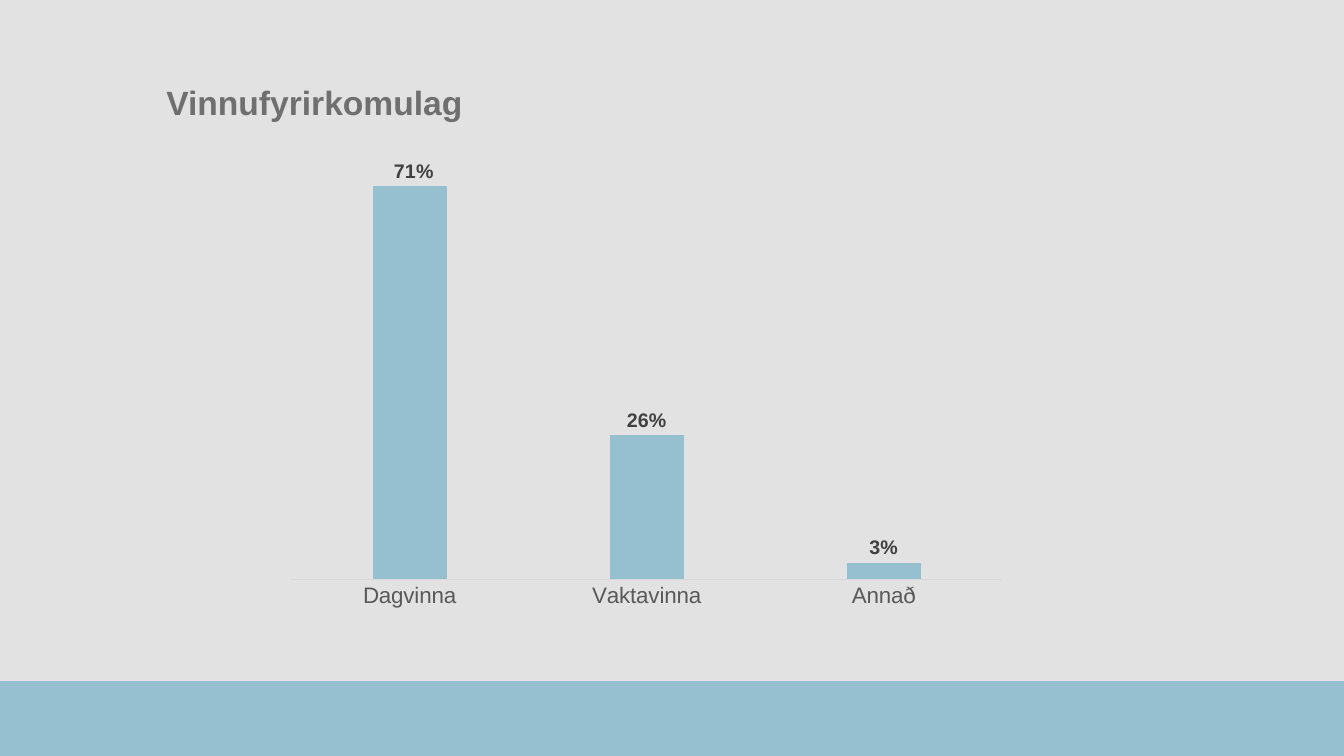
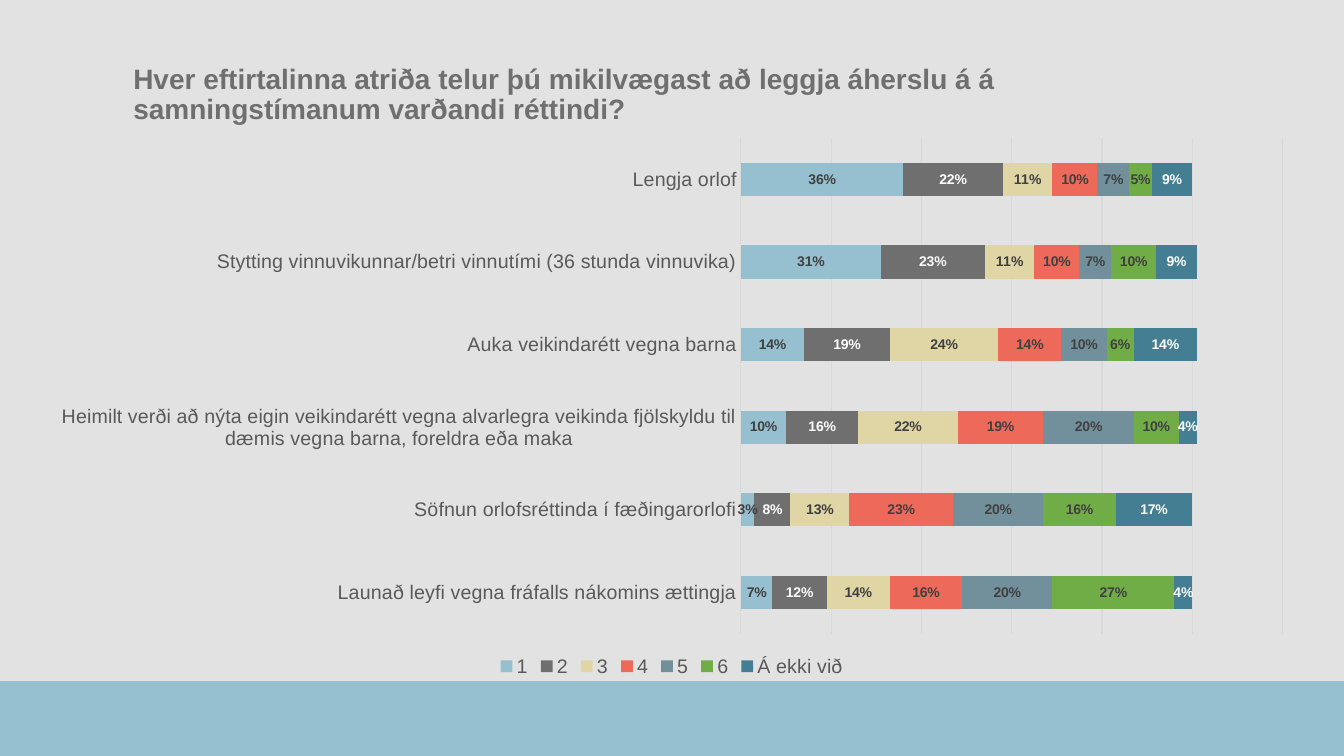
from dataclasses import dataclass

from lxml import etree
from pptx import Presentation
from pptx import util as u
from pptx.chart.data import CategoryChartData
from pptx.dml.color import RGBColor
from pptx.enum import chart as ch, shapes, text

FONT = "Arial"
BACKGROUND, BLUE, GREY, RULE = "E2E2E2", "96C0CF", "706F6F", "D9D9D9"
DARK, LABEL, WHITE = "404040", "595959", "FFFFFF"
WIDTH, HEIGHT, BAND_TOP = 960, 540, 486.5


@dataclass
class Box:
    left: float
    top: float
    width: float
    height: float

    def points(self) -> tuple:
        return tuple(u.Pt(v) for v in (self.left, self.top, self.width, self.height))


@dataclass
class Series:
    name: str
    percents: tuple
    fill: str = BLUE
    label: str = DARK


@dataclass
class ChartSlide:
    title: str
    title_box: Box
    title_size: int
    kind: ch.XL_CHART_TYPE
    chart_box: Box
    plot_box: Box
    categories: tuple
    series: tuple
    axis_max: float
    axis_size: int
    label_size: int
    gap: int
    overlap: int
    stacked: bool = False
    first_label_shift: float = 0


def rgb(value: str) -> RGBColor:
    return RGBColor.from_string(value)


def set_font(font, size: int, color: str, bold: bool = False) -> None:
    font.name, font.size, font.bold = FONT, u.Pt(size), bold
    font.color.rgb = rgb(color)


def set_fill(fill, color: str) -> None:
    fill.solid()
    fill.fore_color.rgb = rgb(color)


def set_rule(line) -> None:
    line.color.rgb, line.width = rgb(RULE), u.Pt(0.75)


def add_band(s) -> None:
    band = Box(0, BAND_TOP, WIDTH, HEIGHT - BAND_TOP)
    sp = s.shapes.add_shape(shapes.MSO_SHAPE.RECTANGLE, *band.points())
    sp.shadow.inherit = False
    set_fill(sp.fill, BLUE)
    sp.line.fill.background()


def add_title(s, item: ChartSlide) -> None:
    sp = s.shapes.title
    sp.left, sp.top, sp.width, sp.height = item.title_box.points()
    tf = sp.text_frame
    tf.text = item.title
    tf.word_wrap = True
    tf.auto_size = text.MSO_AUTO_SIZE.NONE
    tf.vertical_anchor = text.MSO_ANCHOR.MIDDLE
    p = tf.paragraphs[0]
    p.alignment, p.line_spacing = text.PP_ALIGN.LEFT, 0.9
    set_font(p.font, item.title_size, GREY, True)


def set_layout(parent, index: int, **values) -> None:
    """Give a chart part a manual layout, which python-pptx has no method for."""
    ns = "{%s}" % parent.nsmap["c"]
    for old in parent.findall(ns + "layout"):
        parent.remove(old)
    layout = etree.Element(ns + "layout")
    parent.insert(index, layout)
    manual = etree.SubElement(layout, ns + "manualLayout")
    for tag, value in values.items():
        etree.SubElement(manual, ns + tag).set("val", str(value))


def place_plot(chart, frame: Box, plot: Box) -> None:
    set_layout(chart.element.chart.plotArea, 0,
               layoutTarget="inner", xMode="edge", yMode="edge",
               x=(plot.left - frame.left) / frame.width,
               y=(plot.top - frame.top) / frame.height,
               w=plot.width / frame.width, h=plot.height / frame.height)


def shift_first_label(chart, item: ChartSlide, position) -> None:
    label = chart.plots[0].series[0].points[0].data_label
    set_font(label.font, item.label_size, item.series[0].label, True)
    label.position = position
    ns = "{%s}" % chart.element.nsmap["c"]
    set_layout(next(chart.element.iter(ns + "dLbl")), 1,
               x=item.first_label_shift / item.chart_box.width, y=0)


def add_chart(s, item: ChartSlide) -> None:
    data = CategoryChartData(number_format="0%")
    data.categories = item.categories
    for series in item.series:
        data.add_series(series.name, [v / 100 for v in series.percents])
    chart = s.shapes.add_chart(item.kind, *item.chart_box.points(), data).chart
    set_font(chart.font, 10, "000000")
    chart.has_title = False
    place_plot(chart, item.chart_box, item.plot_box)

    # Axes
    cat, val = chart.category_axis, chart.value_axis
    cat.major_tick_mark = ch.XL_TICK_MARK.NONE
    set_font(cat.tick_labels.font, item.axis_size, LABEL)
    set_rule(cat.format.line)
    val.minimum_scale, val.maximum_scale, val.major_unit = 0, item.axis_max, 0.2
    val.visible = False
    val.has_major_gridlines = item.stacked
    if item.stacked:
        set_rule(val.major_gridlines.format.line)

    # Legend
    chart.has_legend = item.stacked
    if item.stacked:
        chart.legend.position = ch.XL_LEGEND_POSITION.BOTTOM
        chart.legend.include_in_layout = False
        set_font(chart.legend.font, item.axis_size, LABEL)

    # Bars and their labels
    plot = chart.plots[0]
    plot.gap_width, plot.overlap, plot.vary_by_categories = item.gap, item.overlap, False
    position = ch.XL_LABEL_POSITION.CENTER if item.stacked else ch.XL_LABEL_POSITION.OUTSIDE_END
    for bars, series in zip(plot.series, item.series):
        set_fill(bars.format.fill, series.fill)
        labels = bars.data_labels
        labels.show_value, labels.position = True, position
        labels.number_format, labels.number_format_is_linked = "0%", False
        set_font(labels.font, item.label_size, series.label, True)
    if item.first_label_shift:
        shift_first_label(chart, item, position)


SLIDES = (
    ChartSlide(
        title="Vinnufyrirkomulag",
        title_box=Box(111.6, 50.4, 737.3, 49), title_size=24,
        kind=ch.XL_CHART_TYPE.COLUMN_CLUSTERED,
        chart_box=Box(197.3, 92.2, 529.2, 349.2), plot_box=Box(208, 97.5, 508, 316.3),
        categories=("Dagvinna", "Vaktavinna", "Annað"),
        series=(Series("Series 1", (71, 26, 3)),),
        axis_max=0.8, axis_size=16, label_size=14, gap=219, overlap=-27,
        first_label_shift=3,
    ),
    ChartSlide(
        title="Hver eftirtalinna atriða telur þú mikilvægast að leggja áherslu á "
              "á samningstímanum varðandi réttindi?",
        title_box=Box(88, 36, 760.3, 64.8), title_size=20,
        kind=ch.XL_CHART_TYPE.BAR_STACKED,
        chart_box=Box(25.9, 90.7, 907.9, 396), plot_box=Box(529.2, 98.7, 387, 354),
        categories=(
            "Launað leyfi vegna fráfalls nákomins ættingja",
            "Söfnun orlofsréttinda í fæðingarorlofi",
            "Heimilt verði að nýta eigin veikindarétt vegna alvarlegra veikinda "
            "fjölskyldu til dæmis vegna barna, foreldra eða maka",
            "Auka veikindarétt vegna barna",
            "Stytting vinnuvikunnar/betri vinnutími (36 stunda vinnuvika)",
            "Lengja orlof",
        ),
        series=(
            Series("1", (7, 3, 10, 14, 31, 36)),
            Series("2", (12, 8, 16, 19, 23, 22), GREY, WHITE),
            Series("3", (14, 13, 22, 24, 11, 11), "DFD5A5"),
            Series("4", (16, 23, 19, 14, 10, 10), "ED6959"),
            Series("5", (20, 20, 20, 10, 7, 7), "71909C"),
            Series("6", (27, 16, 10, 6, 10, 5), "70AD47"),
            Series("Á ekki við", (4, 17, 4, 14, 9, 9), "437E93", WHITE),
        ),
        axis_max=1.2, axis_size=14, label_size=10, gap=150, overlap=100, stacked=True,
    ),
)


def main() -> None:
    prs = Presentation()
    prs.slide_width, prs.slide_height = u.Pt(WIDTH), u.Pt(HEIGHT)
    set_fill(prs.slide_master.background.fill, BACKGROUND)
    for item in SLIDES:
        s = prs.slides.add_slide(prs.slide_layouts.get_by_name("Title Only"))
        add_band(s)
        add_title(s, item)
        add_chart(s, item)
    prs.save("out.pptx")


if __name__ == "__main__":
    main()
